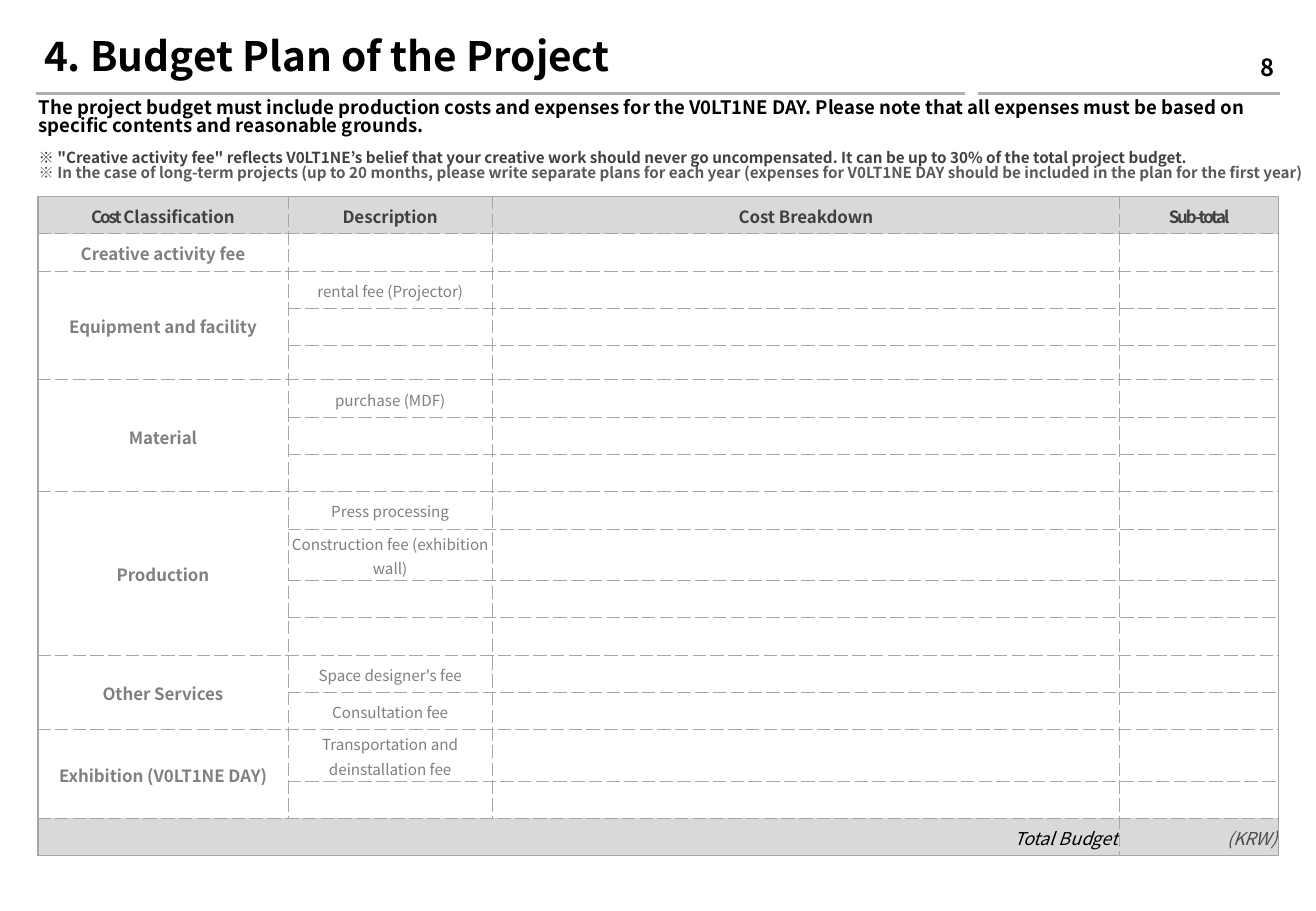
"""Build the budget plan slide with its cost table."""
from lxml import etree
from pptx import Presentation, util as u
from pptx.dml.color import RGBColor
from pptx.enum import shapes, text
from pptx.oxml.ns import qn

FACE = "Noto Sans CJK KR"
BLACK = RGBColor(0, 0, 0)
DARK = RGBColor(0x40, 0x40, 0x40)
KRW = RGBColor(0x4C, 0x4C, 0x4C)
NOTE = RGBColor(0x59, 0x59, 0x59)
GREY = RGBColor(0x80, 0x80, 0x80)
RULE = RGBColor(0xAE, 0xAE, 0xAE)
EDGE = RGBColor(0xA6, 0xA6, 0xA6)
BAND = RGBColor(0xD9, 0xD9, 0xD9)

LEFT, MID, RIGHT = text.PP_ALIGN.LEFT, text.PP_ALIGN.CENTER, text.PP_ALIGN.RIGHT
TIGHT = -120
COLS = (5.23, 4.27, 13.11, 3.33)
ROW, SHORT = 0.78, 0.71
HEADS = (
    (("Cost ", TIGHT), ("Classification", 0)),
    (("Description", 0),),
    (("Cost Breakdown", 0),),
    (("Sub-total", TIGHT),),
)
GROUPS = (
    ("Creative activity fee", ("",)),
    ("Equipment and facility", ("rental fee (Projector)", "", "")),
    ("Material", ("purchase (MDF)", "", "")),
    ("Production", ("Press processing", "Construction fee (exhibition wall)", "", "")),
    ("Other Services", ("Space designer's fee", "Consultation fee")),
    ("Exhibition (V0LT1NE DAY)", ("Transportation and deinstallation fee", "")),
)
LEAD = (
    "The project budget must include production costs and expenses for the V0LT1NE DAY. "
    "Please note that all expenses must be based on specific contents and reasonable grounds."
)
NOTES = (
    "※ \"Creative activity fee\" reflects V0LT1NE’s belief that your creative work should "
    "never go uncompensated. It can be up to 30% of the total project budget.",
    "※ In the case of long-term projects (up to 20 months, please write separate plans for "
    "each year (expenses for V0LT1NE DAY should be included in the plan for the first year)",
)


def set_all(item, **vals):
    """Set every given attribute on the item."""
    for name, val in vals.items():
        setattr(item, name, val)


def add_run(para, words, size, color, gap=0, **style):
    """Add a formatted run to a paragraph."""
    run = para.add_run()
    run.text = words
    set_all(run.font, name=FACE, size=u.Pt(size), **style)
    run.font.color.rgb = color
    props = run._r.get_or_add_rPr()
    etree.SubElement(props, qn("a:ea"), typeface=FACE)
    if gap:
        props.set("spc", str(gap))


def place(shape, box):
    """Move and size a shape in centimetres."""
    for name, val in zip(("left", "top", "width", "height"), box):
        setattr(shape, name, u.Cm(val))


def fill_box(shape, box, lines, size, align=LEFT, space=None, pad=None, wrap=True):
    """Place a text shape and write its bold lines."""
    place(shape, box)
    frame = shape.text_frame
    set_all(frame, word_wrap=wrap, auto_size=text.MSO_AUTO_SIZE.NONE)
    if pad is not None:
        inset = u.Cm(pad)
        set_all(frame, margin_left=inset, margin_right=inset, margin_top=inset,
                margin_bottom=inset, vertical_anchor=text.MSO_ANCHOR.MIDDLE)
    for i, (words, color) in enumerate(lines):
        para = frame.add_paragraph() if i else frame.paragraphs[0]
        set_all(para, alignment=align, line_spacing=space)
        add_run(para, words, size, color, bold=True)


def add_box(slide, *args, **style):
    """Add a text box and fill it."""
    fill_box(slide.shapes.add_textbox(0, 0, 0, 0), *args, **style)


def add_rule(slide, start, end, top):
    """Draw a flat grey rule."""
    line = slide.shapes.add_connector(
        shapes.MSO_CONNECTOR.STRAIGHT, u.Cm(start), u.Cm(top), u.Cm(end), u.Cm(top))
    line.line.color.rgb = RULE
    line.line.width = u.Pt(2)
    etree.SubElement(line._element.spPr, qn("a:effectLst"))


def add_edge(cell, side, outer):
    """Give one side of a cell a solid or dashed border."""
    width = u.Pt(1 if outer else 0.5)
    edge = etree.SubElement(cell._tc.get_or_add_tcPr(), qn("a:ln" + side), w=str(width))
    fill = etree.SubElement(edge, qn("a:solidFill"))
    etree.SubElement(fill, qn("a:srgbClr"), val=str(EDGE))
    etree.SubElement(edge, qn("a:prstDash"), val="solid" if outer else "sysDash")


def dress(cell, outer, band):
    """Set the insets, borders and fill of a cell."""
    pad = u.Cm(0.03)
    set_all(cell, margin_left=pad, margin_right=pad, margin_top=pad, margin_bottom=pad,
            vertical_anchor=text.MSO_ANCHOR.MIDDLE)
    for side, flag in outer.items():
        add_edge(cell, side, flag)
    if band:
        cell.fill.solid()
        cell.fill.fore_color.rgb = BAND
    else:
        cell.fill.background()
    etree.SubElement(cell.text_frame.paragraphs[0]._p, qn("a:endParaRPr"), sz="900")


def write(cell, parts, size, color, align=MID, **style):
    """Write runs of text with their letter spacing into a cell."""
    para = cell.text_frame.paragraphs[0]
    set_all(para, alignment=align, line_spacing=1.1)
    for words, gap in parts:
        add_run(para, words, size, color, gap, **style)


def add_costs(slide):
    """Add the cost table."""
    count = 2 + sum(len(items) for _, items in GROUPS)
    last, end = count - 1, len(COLS) - 1
    grid = slide.shapes.add_table(count, len(COLS), u.Cm(0.79), u.Cm(4.11),
                                  u.Cm(sum(COLS)), u.Cm(ROW * count)).table
    set_all(grid, first_row=False, horz_banding=False)
    for col, width in zip(grid.columns, COLS):
        col.width = u.Cm(width)
    for r, row in enumerate(grid.rows):
        row.height = u.Cm(SHORT if r == 4 else ROW)
        for c, cell in enumerate(row.cells):
            outer = {"L": c == 0, "R": c == end, "T": r == 0, "B": r == last}
            dress(cell, outer, r in (0, last))
    for c, parts in enumerate(HEADS):
        write(grid.cell(0, c), parts, 10, DARK, bold=True)
    top = 1
    for name, items in GROUPS:
        head = grid.cell(top, 0)
        if len(items) > 1:
            head.merge(grid.cell(top + len(items) - 1, 0))
        write(head, ((name, 0),), 10, GREY, bold=True)
        for r, item in enumerate(items, top):
            if item:
                write(grid.cell(r, 1), ((item, 0),), 9, GREY)
        top += len(items)
    total = grid.cell(last, 0)
    total.merge(grid.cell(last, end - 1))
    write(total, (("Total Budget", 0),), 10.5, BLACK, RIGHT, italic=True)
    write(grid.cell(last, end), (("(KRW)", 0),), 10.5, KRW, RIGHT, italic=True)


def main():
    """Build and save the slide."""
    deck = Presentation()
    set_all(deck, slide_width=u.Cm(27.51), slide_height=u.Cm(19.05))
    slide = deck.slides.add_slide(deck.slide_layouts[5])
    add_rule(slide, 0.76, 20.17, 1.96)
    add_rule(slide, 20.45, 26.75, 1.96)
    add_costs(slide)
    fill_box(slide.shapes.title, (0.79, 0.53, 21.82, 1.4),
             (("4. Budget Plan of the Project", BLACK),), 24, space=0.9, pad=0.13)
    add_box(slide, (0.56, 1.96, 26.19, 1.19), ((LEAD, BLACK),), 11, space=0.82)
    add_box(slide, (26.21, 0.97, 0.56, 0.86), (("8", BLACK),), 14, RIGHT, pad=0.13, wrap=False)
    add_box(slide, (0.56, 3.05, 28.07, 1.02), zip(NOTES, (DARK, NOTE)), 9, space=0.82)
    deck.save("out.pptx")


if __name__ == "__main__":
    main()
